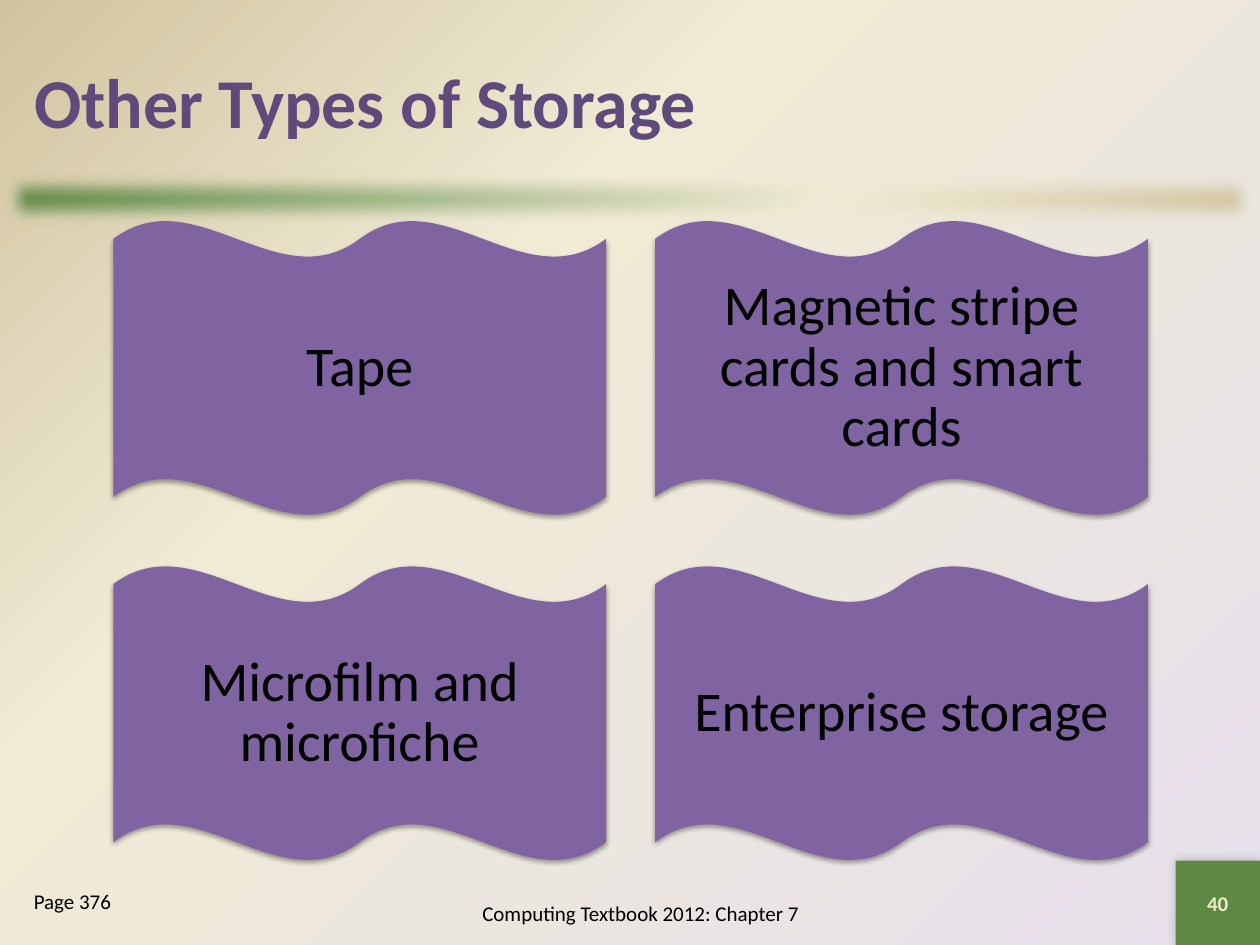
from lxml.etree import SubElement
from pptx import Presentation
from pptx.dml.color import RGBColor
from pptx.enum.shapes import MSO_SHAPE
from pptx.enum.text import MSO_ANCHOR, PP_ALIGN
from pptx.oxml import parse_xml
from pptx.oxml.ns import nsdecls, qn
from pptx.util import Inches, Pt

FONT = "Calibri"
COLORS = {
    "green": "5E8945",
    "cream": "F0EBD5",
    "sand": "D1C39F",
    "lilac": "E6E0EC",
    "purple": "8064A2",
    "title": "604A7B",
    "number": "EEEBCA",
    "black": "000000",
}
STORAGE_TYPES = [
    "Tape",
    "Magnetic stripe cards and smart cards",
    "Microfilm and microfiche",
    "Enterprise storage",
]


def color(name):
    return RGBColor.from_string(COLORS[name])


def write_text(shape, text, size, color_name="black", bold=False,
               align=PP_ALIGN.CENTER, anchor=MSO_ANCHOR.MIDDLE):
    text_frame = shape.text_frame
    text_frame.text = text
    text_frame.word_wrap = True
    text_frame.vertical_anchor = anchor
    paragraph = text_frame.paragraphs[0]
    paragraph.alignment = align
    font = paragraph.runs[0].font
    font.name = FONT
    font.size = Pt(size)
    font.bold = bold
    font.color.rgb = color(color_name)
    return paragraph


def add_filled_shape(slide, kind, left, top, width, height, color_name):
    shape = slide.shapes.add_shape(
        kind, Inches(left), Inches(top), Inches(width), Inches(height))
    shape.shadow.inherit = False
    shape.fill.solid()
    shape.fill.fore_color.rgb = color(color_name)
    shape.line.fill.background()
    return shape


def add_text_box(slide, left, top, width, height):
    return slide.shapes.add_textbox(
        Inches(left), Inches(top), Inches(width), Inches(height))


def replace_with_gradient(properties, first_color, direction):
    """Swap the solid fill for a gradient that ends in cream and sand."""
    stops = "".join(
        f'<a:gs pos="{position * 1000}"><a:srgbClr val="{COLORS[name]}"/></a:gs>'
        for position, name in [(0, first_color), (65, "cream"), (100, "sand")])
    gradient = parse_xml(
        f'<a:gradFill {nsdecls("a")} rotWithShape="1">'
        f'<a:gsLst>{stops}</a:gsLst>{direction}</a:gradFill>')
    properties.replace(properties.find(qn("a:solidFill")), gradient)


def add_effect(shape, tag, **attributes):
    effects = shape._element.spPr.find(qn("a:effectLst"))
    return SubElement(effects, qn(tag),
                      {key: str(int(value)) for key, value in attributes.items()})


def add_shadow(shape, opacity, blur, distance, angle):
    shadow = add_effect(shape, "a:outerShdw", blurRad=Pt(blur),
                        dist=Pt(distance), dir=angle * 60000, rotWithShape=0)
    shadow_color = SubElement(shadow, qn("a:srgbClr"), val=COLORS["black"])
    SubElement(shadow_color, qn("a:alpha"), val=str(opacity * 1000))


def set_background(slide):
    fill = slide.background.fill
    fill.solid()
    fill.fore_color.rgb = color("lilac")
    replace_with_gradient(
        slide._element.cSld.find(qn("p:bg")).find(qn("p:bgPr")), "lilac",
        '<a:path path="circle"><a:fillToRect l="100000" t="100000"/></a:path>')


def add_divider(slide):
    bar = add_filled_shape(slide, MSO_SHAPE.RECTANGLE, 0, 1.33, 10, 0.5, "green")
    replace_with_gradient(bar._element.spPr, "green",
                          '<a:lin ang="2700000" scaled="1"/>')
    add_effect(bar, "a:softEdge", rad=Inches(0.14))


def add_title(slide, text):
    title = slide.shapes.title
    title.left, title.top = Inches(0.17), Inches(0.17)
    title.width, title.height = Inches(9.67), Inches(1.25)
    write_text(title, text, 40, "title", bold=True, align=PP_ALIGN.LEFT)


def add_storage_wave(slide, index, text):
    row, column = divmod(index, 2)
    wave = add_filled_shape(slide, MSO_SHAPE.DOUBLE_WAVE, 0.9 + column * 4.3,
                            1.75 + row * 2.74, 3.91, 2.34, "purple")
    add_shadow(wave, opacity=38, blur=3.1, distance=1.6, angle=90)
    paragraph = write_text(wave, text, 32)
    paragraph.line_spacing = 0.9
    text_frame = wave.text_frame
    text_frame.margin_left = text_frame.margin_right = Inches(0.13)
    text_frame.margin_top = text_frame.margin_bottom = Inches(0.13)


def add_footer(slide):
    number = add_filled_shape(slide, MSO_SHAPE.RECTANGLE,
                              9.33, 6.83, 0.67, 0.67, "green")
    add_shadow(number, opacity=20, blur=6, distance=0, angle=225)
    write_text(number, "40", 12, "number", bold=True)
    write_text(add_text_box(slide, 3, 7, 4.17, 0.5),
               "Computing Textbook 2012: Chapter 7", 12)
    write_text(add_text_box(slide, 0.17, 7, 1.83, 0.5), "Page 376", 12,
               align=PP_ALIGN.LEFT, anchor=MSO_ANCHOR.TOP)


def main():
    presentation = Presentation()
    presentation.slide_width = Inches(10)
    presentation.slide_height = Inches(7.5)
    slide = presentation.slides.add_slide(presentation.slide_layouts[5])
    set_background(slide)
    add_divider(slide)
    add_title(slide, "Other Types of Storage")
    for index, text in enumerate(STORAGE_TYPES):
        add_storage_wave(slide, index, text)
    add_footer(slide)
    presentation.save("out.pptx")


if __name__ == "__main__":
    main()
